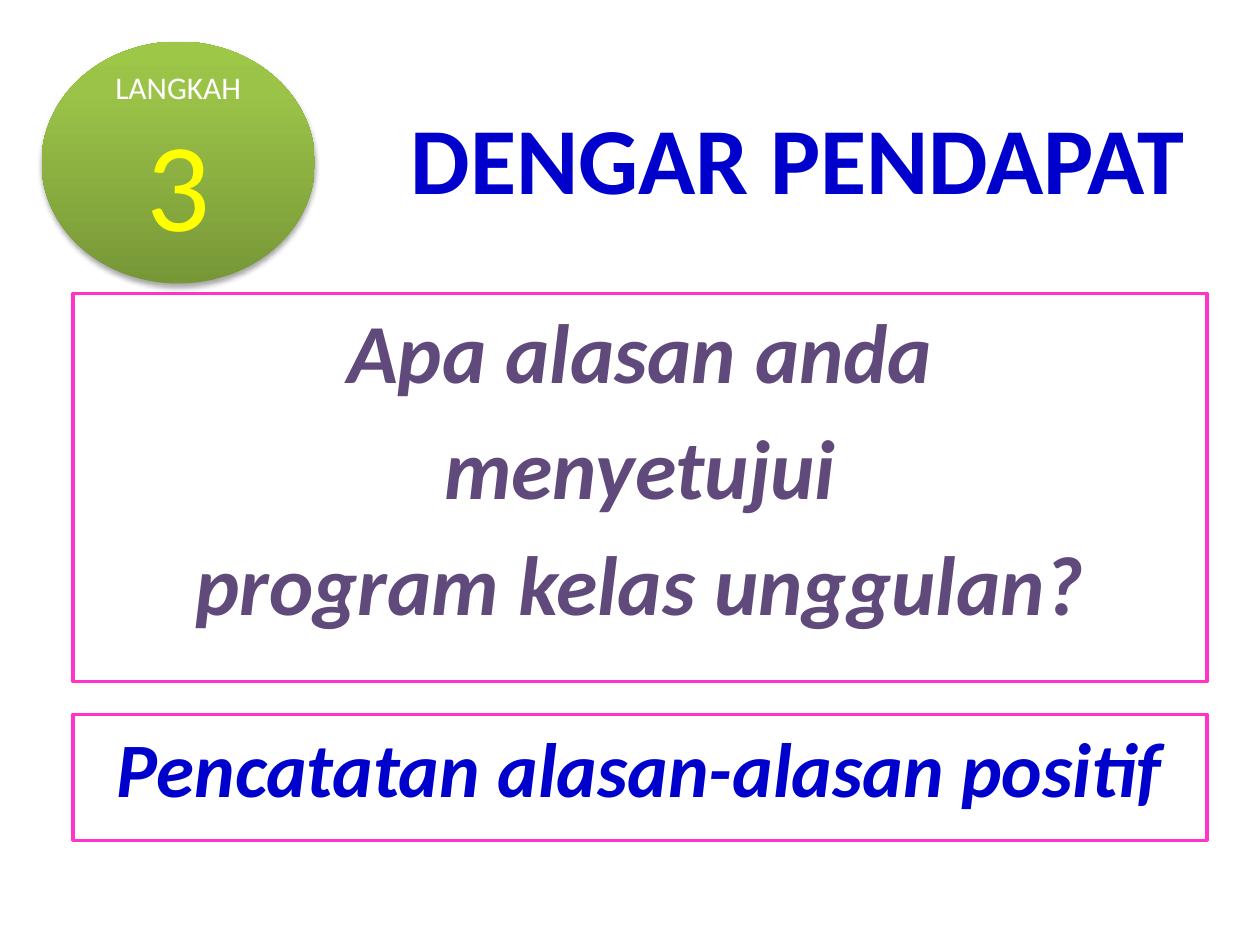
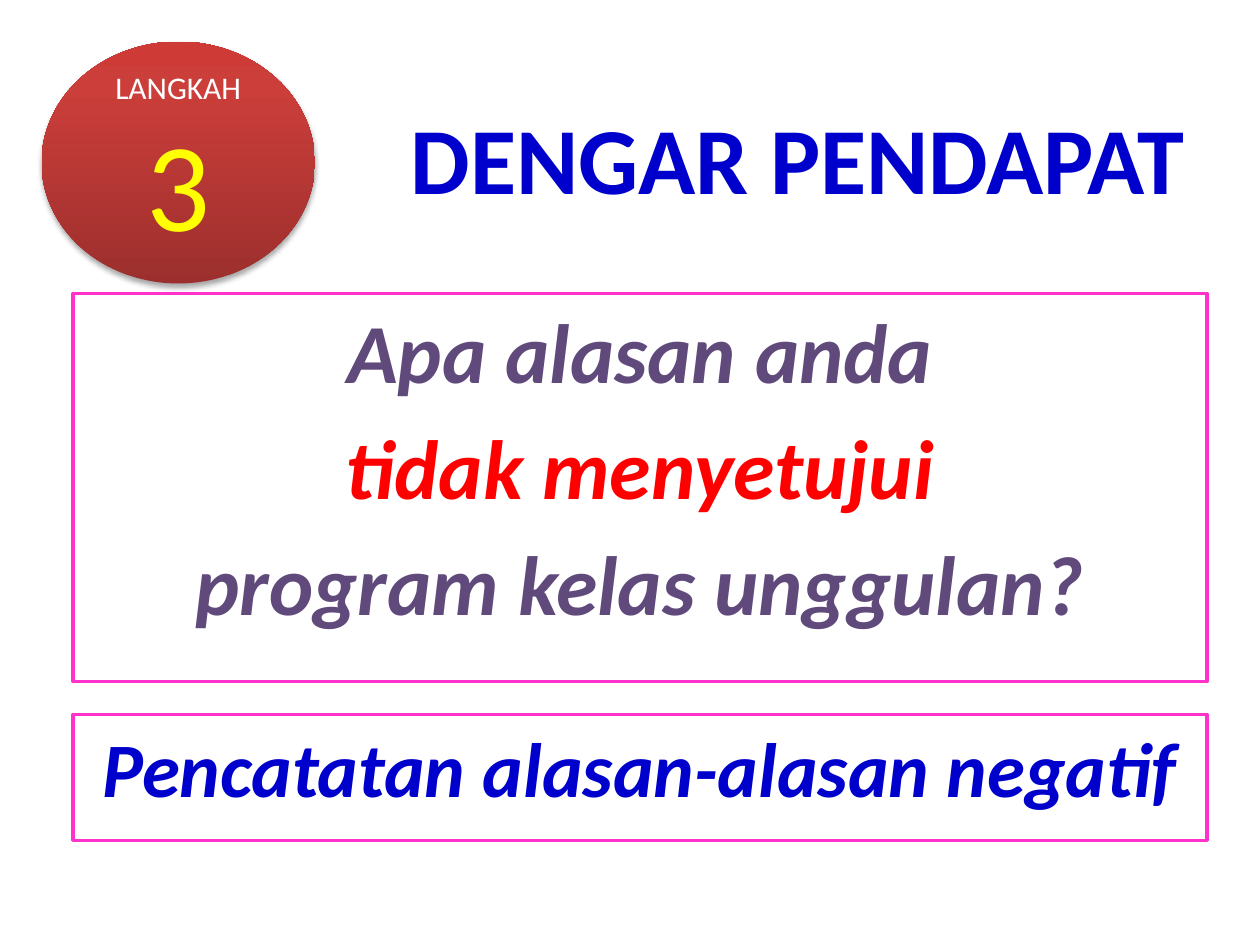
from copy import deepcopy
from dataclasses import dataclass

from pptx import Presentation
from pptx.dml.color import RGBColor
from pptx.enum.shapes import MSO_SHAPE
from pptx.enum.text import MSO_ANCHOR, PP_ALIGN
from pptx.oxml import parse_xml
from pptx.oxml.ns import nsdecls, qn
from pptx.util import Inches, Pt

RECTANGLE, OVAL = MSO_SHAPE.RECTANGLE, MSO_SHAPE.OVAL
TOP, MIDDLE = MSO_ANCHOR.TOP, MSO_ANCHOR.MIDDLE
CENTER, RIGHT = PP_ALIGN.CENTER, PP_ALIGN.RIGHT

FONT = "Calibri"
WHITE = RGBColor(0xFF, 0xFF, 0xFF)
BLUE = RGBColor(0x00, 0x00, 0xCC)
PINK = RGBColor(0xFF, 0x33, 0xCC)
PURPLE = RGBColor(0x60, 0x4A, 0x7B)
RED = RGBColor(0xFF, 0x00, 0x00)
YELLOW = RGBColor(0xFF, 0xFF, 0x00)
GREEN_SHADES = (RGBColor(0x77, 0x97, 0x37), RGBColor(0x9B, 0xC3, 0x48),
                RGBColor(0x9D, 0xC7, 0x46))
RED_SHADES = (RGBColor(0x9C, 0x2F, 0x2D), RGBColor(0xCB, 0x3E, 0x3A),
              RGBColor(0xCE, 0x3B, 0x37))
SHADE_POSITIONS = (0, 0.8, 1)

PANEL_LEFT, PANEL_WIDTH = Inches(0.58), Inches(9)


@dataclass(frozen=True)
class Line:
    text: str
    size: float
    color: RGBColor
    bold: bool = False
    italic: bool = False
    space_before: float = 0


@dataclass(frozen=True)
class OpinionStep:
    badge_shades: tuple[RGBColor, ...]
    stance: str
    stance_color: RGBColor
    record: str


STEPS = (
    OpinionStep(GREEN_SHADES, "menyetujui", PURPLE,
                "Pencatatan alasan-alasan positif"),
    OpinionStep(RED_SHADES, "tidak menyetujui", RED,
                "Pencatatan alasan-alasan negatif"),
)


def write_lines(frame, lines: list[Line], align=CENTER, anchor=MIDDLE) -> None:
    frame.word_wrap = True
    frame.vertical_anchor = anchor
    for index, line in enumerate(lines):
        paragraph = frame.add_paragraph() if index else frame.paragraphs[0]
        paragraph.text = line.text
        paragraph.alignment = align
        paragraph.space_before = Pt(line.space_before)
        font = paragraph.font
        font.name, font.size = FONT, Pt(line.size)
        font.bold, font.italic = line.bold, line.italic
        font.color.rgb = line.color


def add_title(slide) -> None:
    title = slide.shapes.add_textbox(Inches(2.17), Inches(0.33),
                                     Inches(7.33), Inches(1.83))
    write_lines(title.text_frame,
                [Line("DENGAR PENDAPAT", 54, BLUE, bold=True)], align=RIGHT)


def add_panel(slide, top: Inches, height: Inches, lines: list[Line]) -> None:
    panel = slide.shapes.add_shape(RECTANGLE, PANEL_LEFT, top,
                                   PANEL_WIDTH, height)
    panel.shadow.inherit = False
    panel.fill.solid()
    panel.fill.fore_color.rgb = WHITE
    panel.line.color.rgb = PINK
    panel.line.width = Pt(2)
    write_lines(panel.text_frame, lines, anchor=TOP)


def add_badge(slide, shades: tuple[RGBColor, ...]) -> None:
    """Draw the step number on an oval shaded from dark (bottom) to light."""
    badge = slide.shapes.add_shape(OVAL, Inches(0.33), Inches(0.33),
                                   Inches(2.17), Inches(1.92))
    badge.line.fill.background()
    badge.fill.gradient()
    badge.fill.gradient_angle = 90
    properties = badge._element.spPr
    stop_list = properties.find(".//" + qn("a:gsLst"))
    stop_list.append(deepcopy(stop_list[-1]))
    for stop, position, shade in zip(badge.fill.gradient_stops,
                                     SHADE_POSITIONS, shades):
        stop.position = position
        stop.color.rgb = shade

    badge.shadow.inherit = False
    properties.find(qn("a:effectLst")).append(parse_xml(
        f'<a:outerShdw {nsdecls("a")} blurRad="{Pt(3.1)}" dist="{Pt(1.8)}" '
        'dir="5400000" rotWithShape="0"><a:srgbClr val="000000">'
        '<a:alpha val="35000"/></a:srgbClr></a:outerShdw>'))
    write_lines(badge.text_frame,
                [Line("LANGKAH", 18, WHITE), Line("3", 72, YELLOW)])


def question_line(text: str, color: RGBColor = PURPLE) -> Line:
    return Line(text, 48, color, bold=True, italic=True, space_before=8.6)


def add_step_slide(deck, step: OpinionStep) -> None:
    slide = deck.slides.add_slide(deck.slide_layouts[6])
    add_title(slide)
    add_panel(slide, Inches(2.33), Inches(3.08), [
        question_line("Apa alasan anda"),
        question_line(step.stance, step.stance_color),
        question_line("program kelas unggulan?"),
    ])
    add_badge(slide, step.badge_shades)
    add_panel(slide, Inches(5.67), Inches(1),
              [Line(step.record, 44, BLUE, bold=True, italic=True)])


def main() -> None:
    deck = Presentation()
    deck.slide_width, deck.slide_height = Inches(10), Inches(7.5)
    for step in STEPS:
        add_step_slide(deck, step)
    deck.save("out.pptx")


if __name__ == "__main__":
    main()
